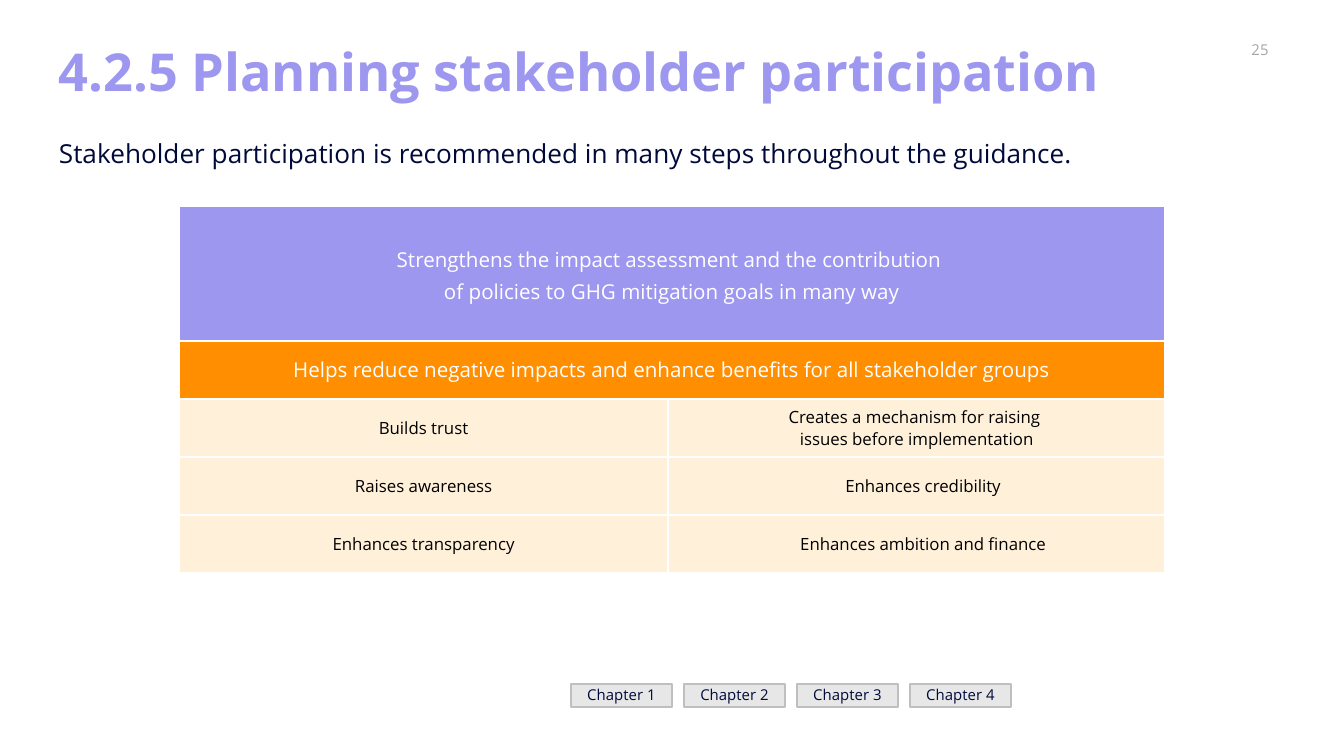
import pptx
import pptx.dml.color
import pptx.enum.shapes
import pptx.enum.text
import pptx.oxml
import pptx.oxml.ns
import pptx.util

RGBColor = pptx.dml.color.RGBColor
ALIGN = pptx.enum.text.PP_ALIGN
ANCHOR = pptx.enum.text.MSO_ANCHOR

EMU_PER_PX = 914400 / 134.4
FONT = "Open Sans"
WHITE = RGBColor(0xFF, 0xFF, 0xFF)
BLACK = RGBColor(0x00, 0x00, 0x00)
NAVY = RGBColor(0x00, 0x0A, 0x3A)
LAVENDER = RGBColor(0x9D, 0x97, 0xF0)
ORANGE = RGBColor(0xFF, 0x8E, 0x00)
CREAM = RGBColor(0xFF, 0xF0, 0xDA)
PAGE_GREY = RGBColor(0xA5, 0xA5, 0xA5)
BUTTON_FILL = RGBColor(0xE7, 0xE7, 0xE7)
BUTTON_LINE = RGBColor(0xBF, 0xBF, 0xBF)

HEADINGS = [
    (["Strengthens the impact assessment and the contribution ",
      "of policies to GHG mitigation goals in many way"], LAVENDER, 1.15),
    (["Helps reduce negative impacts and enhance benefits for all stakeholder groups"],
     ORANGE, 1.0),
]
BENEFITS = [
    ("Builds trust", "Creates a mechanism for raising \vissues before implementation"),
    ("Raises awareness", "Enhances credibility"),
    ("Enhances transparency", "Enhances ambition and finance"),
]


def px(length):
    return pptx.util.Emu(round(length * EMU_PER_PX))


def write(frame, lines, size, color, bold=False, align=ALIGN.LEFT, spacing=1.0):
    for index, line in enumerate(lines):
        paragraph = frame.paragraphs[0] if index == 0 else frame.add_paragraph()
        paragraph.text = line
        paragraph.alignment = align
        paragraph.line_spacing = spacing
        for run in paragraph.runs:
            run.font.name = FONT
            run.font.size = pptx.util.Pt(size)
            run.font.bold = bold
            run.font.color.rgb = color


def set_frame(frame, anchor, side=13, edge=7):
    frame.word_wrap = True
    frame.auto_size = pptx.enum.text.MSO_AUTO_SIZE.NONE
    frame.vertical_anchor = anchor
    frame.margin_left = frame.margin_right = px(side)
    frame.margin_top = frame.margin_bottom = px(edge)


def add_title(slide, left, top, width, height):
    title = slide.shapes.title
    title.left, title.top = px(left), px(top)
    title.width, title.height = px(width), px(height)
    set_frame(title.text_frame, ANCHOR.MIDDLE)
    write(title.text_frame, ["4.2.5 Planning stakeholder participation"], 28, LAVENDER,
          bold=True, spacing=0.9)


def add_label(slide, left, top, width, height, text, size, color,
              anchor=ANCHOR.TOP, side=13, edge=7, align=ALIGN.LEFT):
    label = slide.shapes.add_textbox(px(left), px(top), px(width), px(height))
    set_frame(label.text_frame, anchor, side, edge)
    write(label.text_frame, [text], size, color, align=align)


def add_borders(cell):
    properties = cell._tc.get_or_add_tcPr()
    for position, side in enumerate(("lnL", "lnR", "lnT", "lnB")):
        properties.insert(position, pptx.oxml.parse_xml(
            f'<a:{side} {pptx.oxml.ns.nsdecls("a")} w="{pptx.util.Pt(1.5)}">'
            f'<a:solidFill><a:srgbClr val="{WHITE}"/></a:solidFill></a:{side}>'))


def fill_cell(cell, lines, fill, size, color, spacing=1.0, shift=0):
    cell.fill.solid()
    cell.fill.fore_color.rgb = fill
    cell.vertical_anchor = ANCHOR.MIDDLE
    cell.margin_left, cell.margin_right = px(13 + shift), px(13)
    cell.margin_top = cell.margin_bottom = px(6)
    write(cell.text_frame, lines, size, color, align=ALIGN.CENTER, spacing=spacing)


def add_benefits_table(slide, left, top, width, height):
    row_height = 58
    row_count = len(HEADINGS) + len(BENEFITS)
    table = slide.shapes.add_table(row_count, 2, px(left), px(top),
                                   px(width), px(height)).table
    table.first_row = table.horz_banding = False
    left_width = 489
    table.columns[0].width = px(left_width)
    table.columns[1].width = px(width - left_width)
    for row in table.rows:
        row.height = px(row_height)
    table.rows[0].height = px(height - row_height * (row_count - 1))

    for row, (lines, fill, spacing) in enumerate(HEADINGS):
        table.cell(row, 0).merge(table.cell(row, 1))
        fill_cell(table.cell(row, 0), lines, fill, 11, WHITE, spacing)
    for row, pair in enumerate(BENEFITS, len(HEADINGS)):
        for column, benefit in enumerate(pair):
            indented = column == 1 and row > len(HEADINGS)
            fill_cell(table.cell(row, column), [benefit], CREAM, 9, BLACK,
                      shift=13 if indented else 0)
    for cell in table.iter_cells():
        add_borders(cell)


def add_chapter_buttons(slide, left, top, width, height, count=4, gap=12):
    button_width = (width - gap * (count - 1)) / count
    for index in range(count):
        button = slide.shapes.add_shape(
            pptx.enum.shapes.MSO_SHAPE.RECTANGLE,
            px(left + index * (button_width + gap)), px(top),
            px(button_width), px(height))
        button.shadow.inherit = False
        button.fill.solid()
        button.fill.fore_color.rgb = BUTTON_FILL
        button.line.color.rgb = BUTTON_LINE
        button.line.width = pptx.util.Pt(1)
        set_frame(button.text_frame, ANCHOR.MIDDLE)
        write(button.text_frame, [f"Chapter {index + 1}"], 8, NAVY,
              align=ALIGN.CENTER, spacing=0.9)


def main():
    presentation = pptx.Presentation()
    presentation.slide_width, presentation.slide_height = px(1344), px(756)
    slide = presentation.slides.add_slide(presentation.slide_layouts[5])
    add_label(slide, 1207, 35, 106, 30, "25", 8, PAGE_GREY,
              anchor=ANCHOR.MIDDLE, side=0, edge=0, align=ALIGN.CENTER)
    add_title(slide, 46, 32, 1253, 85)
    add_benefits_table(slide, 179, 206, 986, 367)
    add_label(slide, 46, 130, 1224, 103,
              "Stakeholder participation is recommended in many steps throughout the guidance.",
              14, NAVY)
    add_chapter_buttons(slide, 571, 684, 440, 23)
    presentation.save("out.pptx")


if __name__ == "__main__":
    main()
